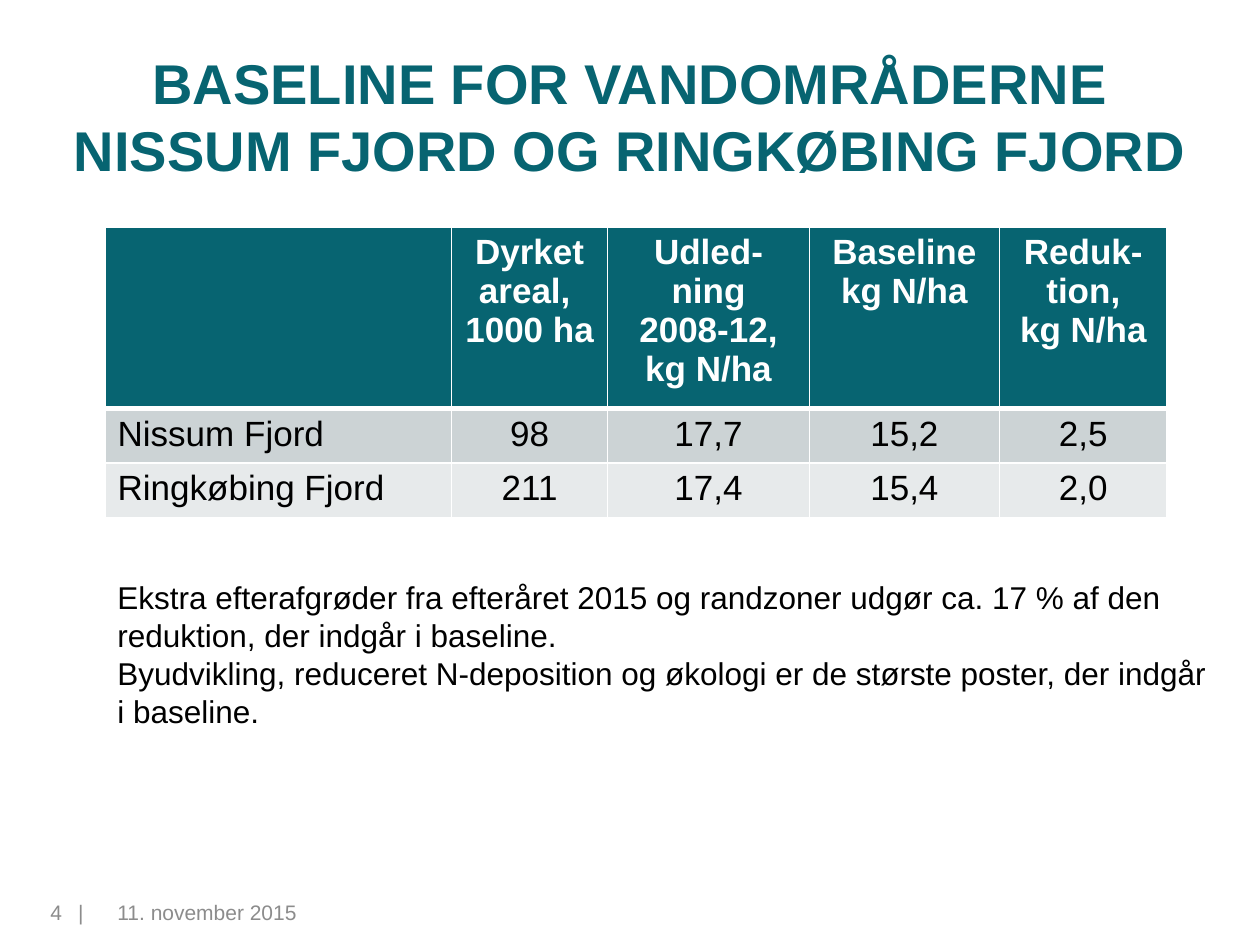
import pptx
import pptx.dml.color
import pptx.enum.text
import pptx.oxml
import pptx.oxml.ns
import pptx.util

Inches = pptx.util.Inches
RGBColor = pptx.dml.color.RGBColor
Align = pptx.enum.text.PP_ALIGN
Anchor = pptx.enum.text.MSO_ANCHOR

TEAL = RGBColor(0x07, 0x64, 0x71)
GREY = RGBColor(0x8C, 0x8C, 0x8C)
BLACK = RGBColor(0, 0, 0)
WHITE = RGBColor(0xFF, 0xFF, 0xFF)
BANDS = [TEAL, RGBColor(0xCC, 0xD3, 0xD5), RGBColor(0xE7, 0xEA, 0xEB)]

WIDTH, HEIGHT = 10, 7.5
LEFT = WIDTH / 12
FOOTER_TOP = HEIGHT * 0.945
NAMESPACE = pptx.oxml.ns.nsdecls("a")

deck = pptx.Presentation()
deck.slide_width, deck.slide_height = Inches(WIDTH), Inches(HEIGHT)
page = deck.slides.add_slide(deck.slide_layouts[6])


def write(para, text, size, color, bold=False, align=Align.LEFT):
    """Add the text run by run, with a line break at each newline."""
    para.alignment = align
    for number, line in enumerate(text.split("\n")):
        if number:
            para.add_line_break()
        span = para.add_run()
        span.text = line
        span.font.name = "Arial"
        span.font.size = pptx.util.Pt(size)
        span.font.bold = bold
        span.font.color.rgb = color


def add_frame(left, top, width, height, wrap=True):
    box = page.shapes.add_textbox(*map(Inches, (left, top, width, height)))
    box.text_frame.word_wrap = wrap
    return box.text_frame


# Title
title = add_frame(WIDTH * 0.02, 0.29, WIDTH * 0.96, HEIGHT / 6)
title.vertical_anchor = Anchor.MIDDLE
write(title.paragraphs[0],
      "BASELINE FOR VANDOMRÅDERNE NISSUM FJORD OG RINGKØBING FJORD",
      32, TEAL, True, Align.CENTER)

# Footer
date = add_frame(LEFT, FOOTER_TOP, 2.33, 0.4)
write(date.paragraphs[0], "11. november 2015", 12, GREY)

number_frame = add_frame(0, FOOTER_TOP, 0.78, 0.4)
number_frame.margin_left = Inches(0.4)
number_para = number_frame.paragraphs[0]
number_para._p.get_or_add_pPr().append(pptx.oxml.parse_xml(
    f'<a:tabLst {NAMESPACE}><a:tab pos="{Inches(0.22)}" algn="l"/></a:tabLst>'))
write(number_para, "4\t|", 12, GREY)

# Nitrogen table
rows = [
    ["", "Dyrket areal, \n1000 ha", "Udled-ning\n2008-12, kg N/ha",
     "Baseline\nkg N/ha", "Reduk-tion,\nkg N/ha"],
    ["Nissum Fjord", "98", "17,7", "15,2", "2,5"],
    ["Ringkøbing Fjord", "211", "17,4", "15,4", "2,0"],
]
column_widths = [2.75, 1.24, 1.6, 1.51, 1.33]
row_heights = [1.44, 0.41, 0.41]
table = page.shapes.add_table(
    len(rows), len(column_widths), Inches(LEFT), Inches(1.8),
    Inches(sum(column_widths)), Inches(sum(row_heights))).table
for column, width in zip(table.columns, column_widths):
    column.width = Inches(width)
for row, height in zip(table.rows, row_heights):
    row.height = Inches(height)

for r, texts in enumerate(rows):
    header = r == 0
    for c, text in enumerate(texts):
        cell = table.cell(r, c)
        if text:
            write(cell.text_frame.paragraphs[0], text, 20,
                  WHITE if header else BLACK, header,
                  Align.CENTER if c else Align.LEFT)
        cell.fill.solid()
        cell.fill.fore_color.rgb = BANDS[r]
        borders = {"lnL": 1, "lnR": 1, "lnT": 3 if r == 1 else 1,
                   "lnB": 3 if header else 1}
        for position, (side, points) in enumerate(borders.items()):
            cell._tc.get_or_add_tcPr().insert(position, pptx.oxml.parse_xml(
                f'<a:{side} {NAMESPACE} w="{pptx.util.Pt(points)}"><a:solidFill>'
                f'<a:srgbClr val="{WHITE}"/></a:solidFill></a:{side}>'))

# Remarks
remarks = add_frame(LEFT, 4.54, 8.93, 1.31, wrap=False)
remarks.auto_size = pptx.enum.text.MSO_AUTO_SIZE.SHAPE_TO_FIT_TEXT
write(remarks.paragraphs[0],
      "Ekstra efterafgrøder fra efteråret 2015 og randzoner udgør ca. 17 % af den\n"
      "reduktion, der indgår i baseline.\n"
      "Byudvikling, reduceret N-deposition og økologi er de største poster, der indgår",
      18, BLACK)
write(remarks.add_paragraph(), "i baseline.", 18, BLACK)

deck.save("out.pptx")
